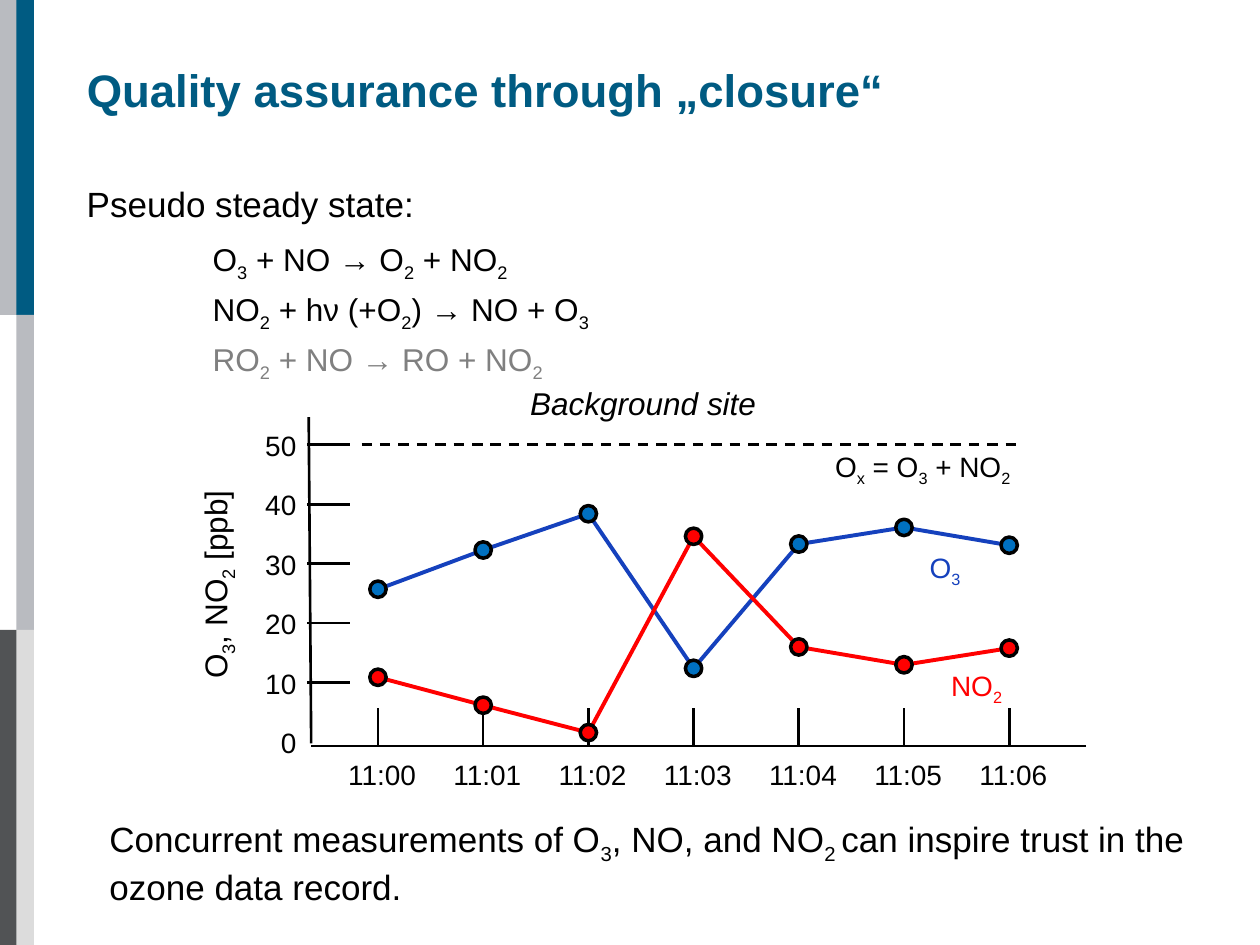
import pptx
import pptx.util
import pptx.dml.color
import pptx.enum.dml
import pptx.enum.shapes
import pptx.enum.text
import lxml.etree

deck = pptx.Presentation()
deck.slide_width = pptx.util.Inches(10)
deck.slide_height = pptx.util.Inches(7.5)
slide = deck.slides.add_slide(deck.slide_layouts[6])
shapes = slide.shapes
unit = deck.slide_width / 100  # grid of 100 columns by 75 rows
color = pptx.dml.color.RGBColor.from_string
Kind = pptx.enum.shapes.MSO_SHAPE
Align = pptx.enum.text.PP_ALIGN


def write(area, lines, size, ink="000000", wrap=False):
    """Add a text box; parts between underscores are subscripts."""
    box = shapes.add_textbox(*(round(n * unit) for n in area))
    frame = box.text_frame
    frame.word_wrap = wrap
    for i, words in enumerate(lines):
        para = frame.paragraphs[0] if i == 0 else frame.add_paragraph()
        for j, part in enumerate(words.split("_")):
            if part:
                run = para.add_run()
                run.text = part
                run.font.name = "Arial"
                run.font.size = pptx.util.Pt(size)
                run.font.color.rgb = color(ink)
                if j % 2:
                    run.font._element.set("baseline", "-25000")
    return box


def rule(x1, y1, x2, y2, ink="000000", width=1.5):
    """Add a straight line between two grid points."""
    ends = (round(n * unit) for n in (x1, y1, x2, y2))
    line = shapes.add_connector(pptx.enum.shapes.MSO_CONNECTOR.STRAIGHT, *ends)
    line.line.color.rgb = color(ink)
    line.line.width = pptx.util.Pt(width)
    props = line._element.spPr
    lxml.etree.SubElement(props, pptx.oxml.ns.qn("a:effectLst"))
    return line


# Side bars: column, row, fill
for col, row, fill in [(0, 0, "B9BBC0"), (0, 50, "515355"), (1.3, 0, "005B82"),
                       (1.3, 25, "B9BBC0"), (1.3, 50, "DCDCDC")]:
    area = (round(n * unit) for n in (col, row, 1.4, 25))
    bar = shapes.add_shape(Kind.RECTANGLE, *area)
    bar.shadow.inherit = False
    bar.fill.solid()
    bar.fill.fore_color.rgb = color(fill)
    bar.line.fill.background()

# Title
title = write((5.9, 2.4, 72.2, 9.4), ["Quality assurance through „closure“"],
              26, "005B82", True)
title.text_frame.vertical_anchor = pptx.enum.text.MSO_ANCHOR.MIDDLE
title.text_frame.paragraphs[0].runs[0].font.bold = True

# Reactions, indented below their heading
body = write((5.9, 14, 91.3, 21.6),
             ["Pseudo steady state:", "O_3_ + NO → O_2_ + NO_2_",
              "NO_2_ + hν (+O_2_) → NO + O_3_", "RO_2_ + NO → RO + NO_2_"],
             18, wrap=True)
head, *steps = body.text_frame.paragraphs
head.runs[0].font.size = pptx.util.Pt(20)
for para, gap in zip(steps, (9, 4, 4)):
    para.space_before = pptx.util.Pt(gap)
    para._p.get_or_add_pPr().set("marL", str(round(10 * unit)))
for run in steps[-1].runs:
    run.font.color.rgb = color("808080")

# Chart scale: column of each minute, row of each ppb value
cols = [30 + 8.35 * i for i in range(7)]
base, step = 58.9, 0.472

# Axes, ticks and labels
rule(24.5, 33.1, 24.7, 59)
rule(86.2, 59.2, 24.7, 59.2)
for i, col in enumerate(cols):
    rule(col, 56.2, col, 59.2)
    write((col - 3.35, 59.6, 7.5, 3.7), [f"11:0{i}"], 16)
for ppb in range(0, 60, 10):
    row = base - step * ppb
    if ppb:
        rule(24.4, row, 27.8, row)
    label = write((20, row - 1.8, 4.5, 3.7), [str(ppb)], 16)
    label.text_frame.paragraphs[0].alignment = Align.RIGHT
write((8.4, 44.2, 17.3, 4), ["O_3_, NO_2_ [ppb]"], 18).rotation = 270

# Series: line colour, marker colour, values in ppb
for ink, fill, data in [
        ("1541BD", "0070C0", [25.7, 32.3, 38.4, 12.4, 33.3, 36.1, 33.1]),
        ("FF0000", "FF0000", [10.9, 6.2, 1.6, 34.6, 16, 13, 15.8])]:
    dots = [(col, base - step * ppb) for col, ppb in zip(cols, data)]
    for start, end in zip(dots, dots[1:]):
        rule(*start, *end, ink, 2.25)
    for col, row in dots:
        area = (round(n * unit) for n in (col - 0.65, row - 0.65, 1.3, 1.3))
        dot = shapes.add_shape(Kind.OVAL, *area)
        dot.shadow.inherit = False
        dot.fill.solid()
        dot.fill.fore_color.rgb = color(fill)
        dot.line.color.rgb = color("000000")
        dot.line.width = pptx.util.Pt(2)

# Total level and series names
level = rule(28.7, 35.3, 81.2, 35.3)
level.line.dash_style = pptx.enum.dml.MSO_LINE.DASH
write((65.3, 35.2, 16.8, 3.7), ["O_x_ = O_3_ + NO_2_"], 16)
write((72.8, 43.2, 4.6, 3.7), ["O_3_"], 16, "1541BD")
write((74.5, 52.6, 6.2, 3.7), ["NO_2_"], 16, "FF0000")

# Conclusion and chart heading
write((7.7, 64.4, 91.3, 8.7),
      ["Concurrent measurements of O_3_, NO, and NO_2 _can inspire trust "
       "in the ozone data record."], 20, wrap=True)
site = write((41.1, 30, 20.1, 4), ["Background site"], 18)
site.text_frame.paragraphs[0].runs[0].font.italic = True

deck.save("out.pptx")
